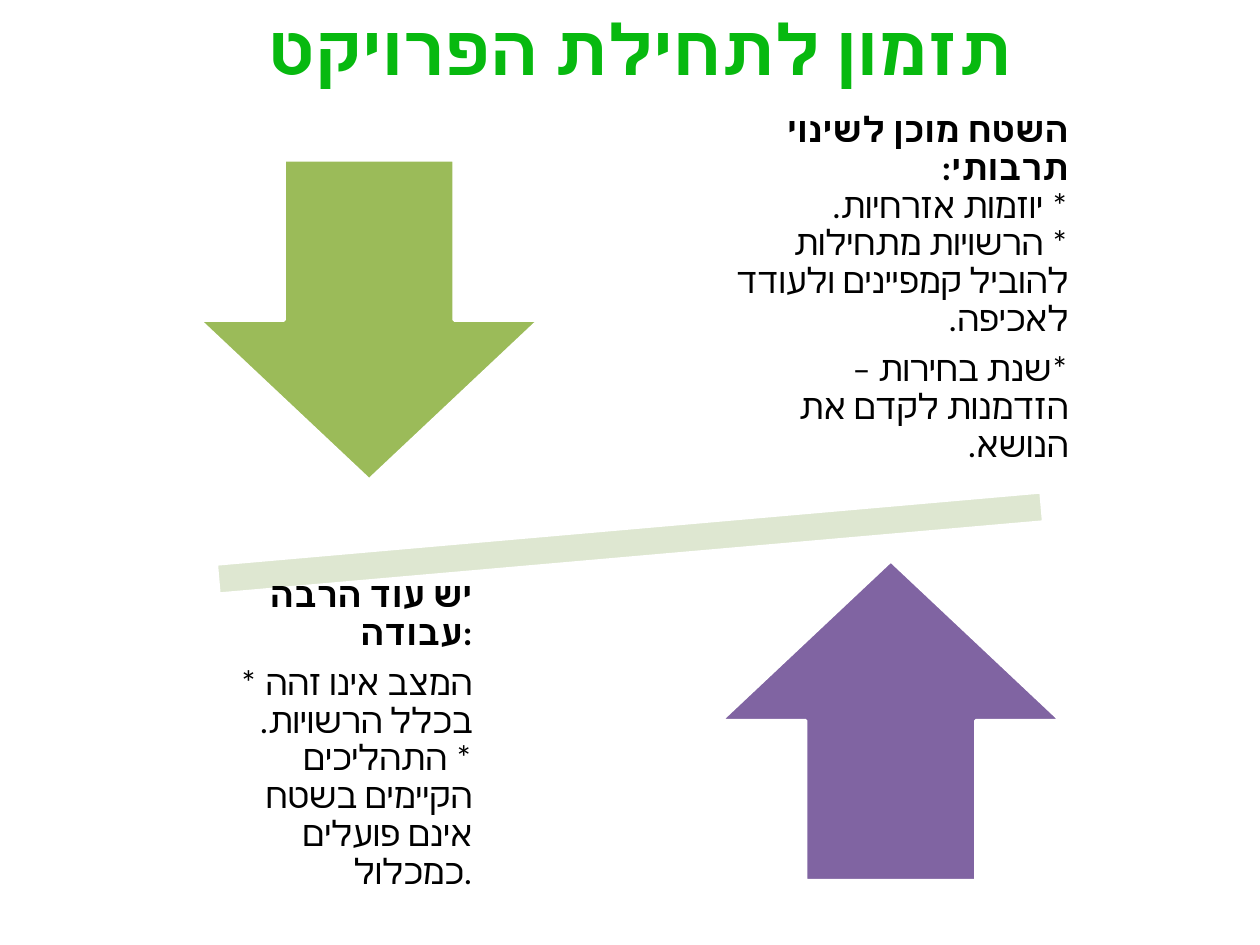
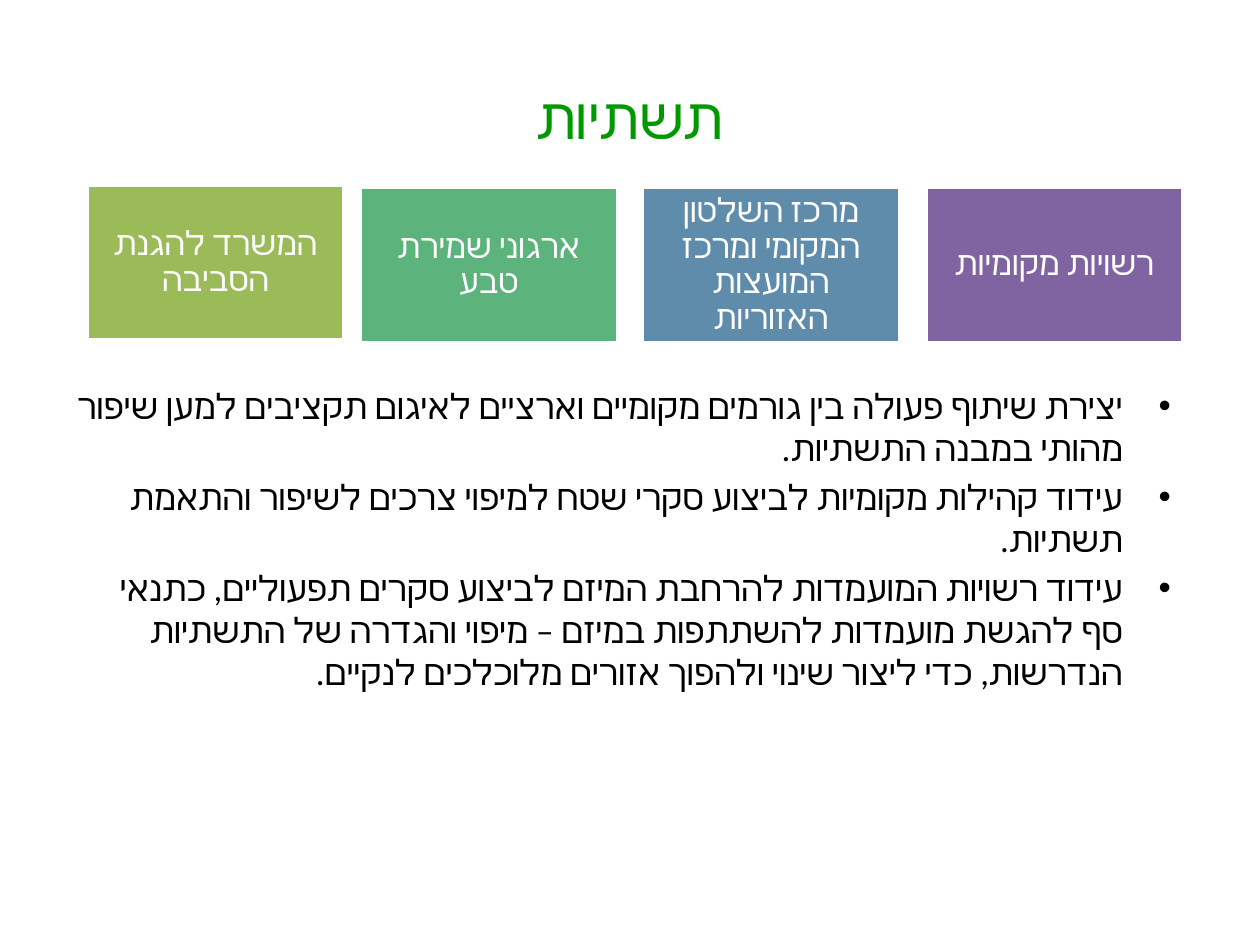
from lxml.etree import SubElement
from pptx import Presentation
from pptx.dml.color import RGBColor
from pptx.enum.shapes import MSO_SHAPE as SHAPE
from pptx.enum.text import MSO_ANCHOR as ANCHOR, PP_ALIGN as ALIGN
from pptx.oxml.ns import qn
from pptx.util import Inches, Pt

FONT = "Calibri"
BLACK = RGBColor(0x00, 0x00, 0x00)
WHITE = RGBColor(0xFF, 0xFF, 0xFF)
BRIGHT_GREEN = RGBColor(0x07, 0xB9, 0x0F)
DARK_GREEN = RGBColor(0x00, 0x99, 0x00)
PALE_GREEN = RGBColor(0xDE, 0xE7, 0xD1)
OLIVE = RGBColor(0x9B, 0xBB, 0x59)
EMERALD = RGBColor(0x5C, 0xB3, 0x7C)
STEEL = RGBColor(0x60, 0x8C, 0xAB)
PURPLE = RGBColor(0x80, 0x64, 0xA2)


class Deck:
    """Holds the presentation, its style and the current slide."""

    def __init__(self):
        self.prs = Presentation()
        self.prs.slide_width, self.prs.slide_height = Inches(10), Inches(7.5)

    def add_slide(self):
        self.s = self.prs.slides.add_slide(self.prs.slide_layouts[6])

    def fill_text(self, sp, paragraphs, size, color, align, rtl=True, inset=None,
                  spacing=None, gap=0, anchor=ANCHOR.MIDDLE, bullet=False):
        tf = sp.text_frame
        tf.word_wrap = True
        tf.vertical_anchor = anchor
        if inset is not None:
            tf.margin_left = tf.margin_right = Inches(inset)
            tf.margin_top = tf.margin_bottom = Inches(inset)
        for i, text in enumerate(paragraphs):
            p = tf.add_paragraph() if i else tf.paragraphs[0]
            p.text = text
            p.alignment = align
            p.line_spacing = spacing
            if i:
                p.space_before = Pt(gap)
            pPr = p._p.get_or_add_pPr()
            if rtl:
                pPr.set("rtl", "1")
            if bullet:
                pPr.set("marL", str(Inches(0.38)))
                pPr.set("indent", str(-Inches(0.38)))
                SubElement(pPr, qn("a:buFont"), typeface="Arial")
                SubElement(pPr, qn("a:buChar"), char="•")
            for r in p.runs:
                r.font.size = Pt(size)
                r.font.name = FONT
                r.font.color.rgb = color
                SubElement(r._r.get_or_add_rPr(), qn("a:cs"), typeface=FONT)

    def text_box(self, at, paragraphs, size, color, align, **style):
        sp = self.s.shapes.add_textbox(*map(Inches, at))
        self.fill_text(sp, paragraphs, size, color, align, **style)
        return sp

    def title(self, text, at, size, color, bold=False):
        sp = self.text_box(at, [text], size, color, ALIGN.CENTER)
        sp.text_frame.paragraphs[0].runs[0].font.bold = bold

    def shape(self, kind, at, fill, rotation=0):
        sp = self.s.shapes.add_shape(kind, *map(Inches, at))
        sp.shadow.inherit = False
        sp.fill.solid()
        sp.fill.fore_color.rgb = fill
        sp.line.color.rgb = WHITE
        sp.line.width = Pt(2)
        sp.rotation = rotation
        return sp

    def tile(self, at, fill, text):
        sp = self.shape(SHAPE.RECTANGLE, at, fill)
        self.fill_text(sp, [text], 19, WHITE, ALIGN.CENTER, inset=0.08, spacing=0.9)

    def argument(self, at, paragraphs, rtl):
        sp = self.text_box(at, paragraphs, 20, BLACK, ALIGN.RIGHT, rtl=rtl,
                           inset=0.16, spacing=0.9, gap=7)
        sp.text_frame.paragraphs[0].runs[0].font.bold = True

    def bullets(self, at, paragraphs):
        self.text_box(at, paragraphs, 20, BLACK, ALIGN.RIGHT, gap=4,
                      anchor=ANCHOR.TOP, bullet=True)


def timing_slide(deck):
    deck.add_slide()
    deck.title("תזמון לתחילת הפרויקט", (0.58, 0.04, 9, 0.67), 40, BRIGHT_GREEN, bold=True)
    deck.shape(SHAPE.MATH_MINUS, (0.53, 3.8, 8.94, 1.02), PALE_GREEN, rotation=355)
    deck.shape(SHAPE.DOWN_ARROW, (1.58, 1.27, 2.7, 2.54), OLIVE)
    deck.argument((5.65, 1.16, 2.99, 2.26), [
        "השטח מוכן לשינוי תרבותי:\v* יוזמות אזרחיות.\v"
        "* הרשויות מתחילות להוביל קמפיינים ולעודד לאכיפה.",
        "*שנת בחירות – הזדמנות לקדם את הנושא.",
    ], rtl=True)
    deck.shape(SHAPE.UP_ARROW, (5.72, 4.45, 2.7, 2.54), PURPLE)
    deck.argument((1.48, 5, 2.43, 1.66), [
        "יש עוד הרבה עבודה:",
        "* המצב אינו זהה בכלל הרשויות.\v* התהליכים הקיימים בשטח אינם פועלים כמכלול.",
    ], rtl=False)


def infrastructure_slide(deck):
    deck.add_slide()
    deck.title("תשתיות", (0.5, 0.3, 9, 1.25), 33, DARK_GREEN)
    partners = [
        (0.69, 1.47, OLIVE, "המשרד להגנת הסביבה"),
        (2.86, 1.49, EMERALD, "ארגוני שמירת טבע"),
        (5.1, 1.49, STEEL, "מרכז השלטון המקומי ומרכז המועצות האזוריות"),
        (7.35, 1.49, PURPLE, "רשויות מקומיות"),
    ]
    for left, top, fill, name in partners:
        deck.tile((left, top, 2.04, 1.23), fill, name)
    deck.bullets((0.5, 3, 8.89, 2.26), [
        "יצירת שיתוף פעולה בין גורמים מקומיים וארציים לאיגום תקציבים "
        "למען שיפור מהותי במבנה התשתיות.",
        "עידוד קהילות מקומיות לביצוע סקרי שטח למיפוי צרכים לשיפור והתאמת תשתיות.",
        "עידוד רשויות המועמדות להרחבת המיזם לביצוע סקרים תפעוליים, "
        "כתנאי סף להגשת מועמדות להשתתפות במיזם – מיפוי והגדרה של התשתיות "
        "הנדרשות, כדי ליצור שינוי ולהפוך אזורים מלוכלכים לנקיים.",
    ])


def main():
    deck = Deck()
    timing_slide(deck)
    infrastructure_slide(deck)
    deck.prs.save("out.pptx")


if __name__ == "__main__":
    main()
